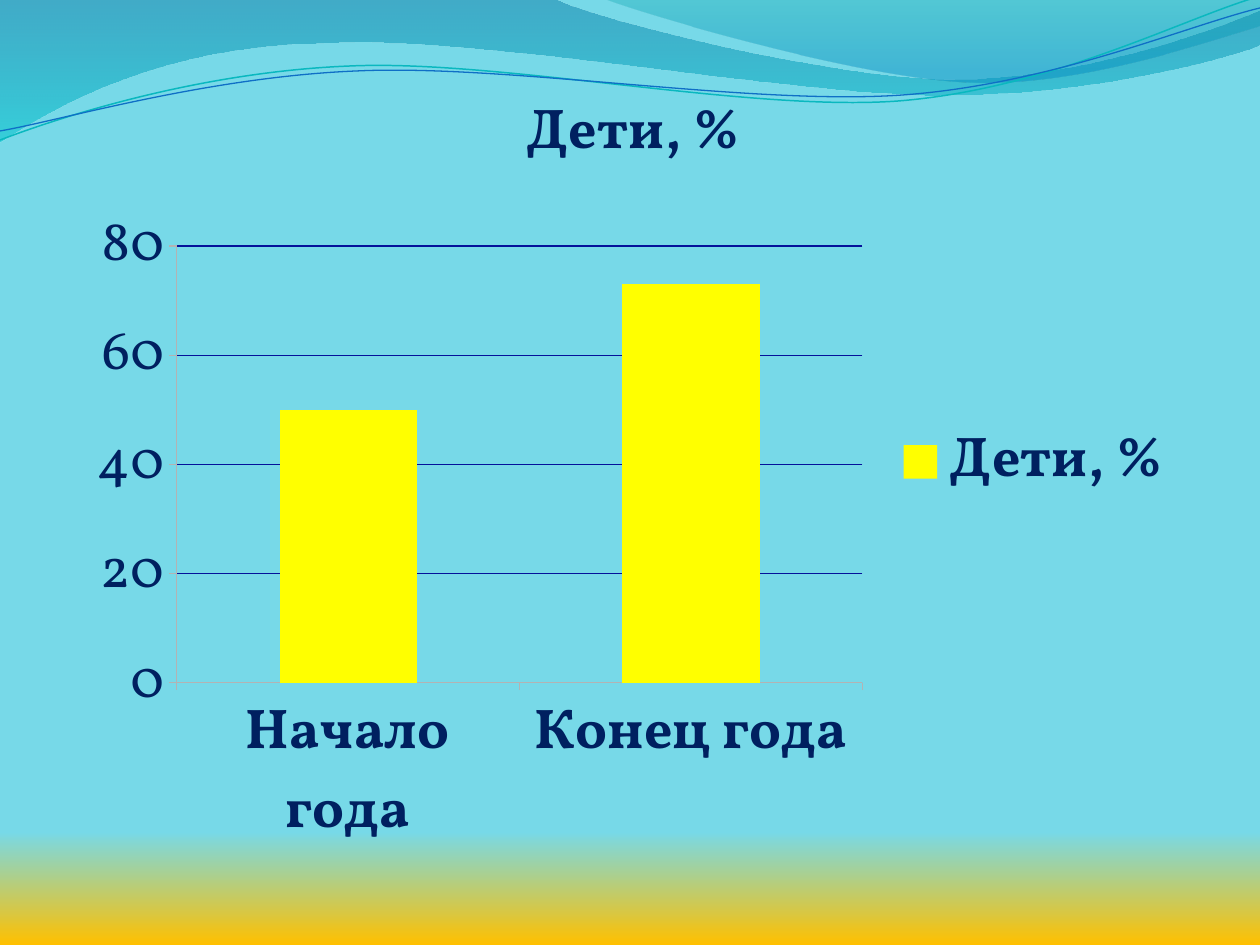
from lxml import etree
from pptx import Presentation
from pptx import util as u
from pptx.chart.data import CategoryChartData
from pptx.dml.color import RGBColor
from pptx.enum import chart as ch
from pptx.oxml.ns import qn

PX = 914400 / 126


def rgb(code):
    return RGBColor.from_string(code)


class Deck:
    font = "Vollkorn"
    ink = "002060"
    size = 32

    def __init__(self, wide, high):
        self.prs = Presentation()
        self.prs.slide_width = self.px(wide)
        self.prs.slide_height = self.px(high)
        self.slide = self.prs.slides.add_slide(self.prs.slide_layouts[6])

    def px(self, n):
        return u.Emu(round(n * PX))

    def grade(self, fill, stops):
        fill.gradient()
        fill.gradient_angle = 270
        for stop, (pos, code) in zip(fill.gradient_stops, stops):
            stop.position = pos
            stop.color.rgb = rgb(code)

    def back(self, stops):
        self.grade(self.slide.background.fill, stops)

    def shape(self, start, parts, close):
        pen = self.slide.shapes.build_freeform(*start, scale=PX)
        pts = [p[i:i + 2] for p in parts for i in range(0, len(p), 2)]
        pen.add_line_segments(pts, close=close)
        item = pen.convert_to_shape()
        item.shadow.inherit = False
        self.bend(item, parts)
        return item

    def bend(self, item, parts):
        lines = iter(list(item._element.iter(qn("a:lnTo"))))
        for part in parts:
            line = next(lines)
            if len(part) == 6:
                line.addprevious(etree.Element(qn("a:cubicBezTo")))
                arc = line.getprevious()
                for seg in (line, next(lines), next(lines)):
                    arc.append(seg[0])
                    seg.getparent().remove(seg)

    def wave(self, start, parts, stops, alphas):
        item = self.shape(start, parts, True)
        item.line.fill.background()
        self.grade(item.fill, stops)
        tints = item._element.spPr.iter(qn("a:srgbClr"))
        for tint, alpha in zip(tints, alphas):
            etree.SubElement(tint, qn("a:alpha")).set("val", str(alpha * 1000))

    def curve(self, start, parts, code, width):
        item = self.shape(start, parts, False)
        item.fill.background()
        item.line.color.rgb = rgb(code)
        item.line.width = u.Pt(width)

    def style(self, font, bold):
        font.name = self.font
        font.size = u.Pt(self.size)
        font.bold = bold
        font.color.rgb = rgb(self.ink)

    def axis(self, axis, bold):
        self.style(axis.tick_labels.font, bold)
        axis.major_tick_mark = ch.XL_TICK_MARK.OUTSIDE
        axis.format.line.color.rgb = rgb("B3B3B3")
        axis.format.line.width = u.Pt(0.75)

    def bars(self, box, name, cats, vals, code):
        data = CategoryChartData()
        data.categories = cats
        data.add_series(name, vals)
        chart = self.slide.shapes.add_chart(
            ch.XL_CHART_TYPE.COLUMN_STACKED, *map(self.px, box), data).chart
        self.style(chart.font, False)
        chart.has_title = True
        run = chart.chart_title.text_frame.paragraphs[0].add_run()
        run.text = name
        self.style(run.font, True)
        chart.has_legend = True
        chart.legend.position = ch.XL_LEGEND_POSITION.RIGHT
        chart.legend.include_in_layout = False
        self.style(chart.legend.font, True)
        self.axis(chart.category_axis, True)
        scale = chart.value_axis
        self.axis(scale, False)
        scale.minimum_scale, scale.maximum_scale = 0, 80
        scale.major_unit = 20
        grid = scale.major_gridlines.format.line
        grid.color.rgb = rgb("04129A")
        grid.width = u.Pt(0.75)
        plot = chart.plots[0]
        plot.vary_by_categories = False
        plot.gap_width, plot.overlap = 150, 100
        fill = plot.series[0].format.fill
        fill.solid()
        fill.fore_color.rgb = rgb(code)


def main():
    deck = Deck(1260, 945)
    deck.back([(0.88, "77D9E8"), (1, "FFC000")])
    deck.wave((0, 0), [
        (554, -1), (600, 21, 837, 79, 955, 79), (1075, 79, 1207, 33, 1260, 11),
        (1261, 45), (1239, 55, 1096, 96, 940, 95), (783, 95, 481, 35, 324, 43),
        (163, 45, 58, 105, -1, 142)],
        [(0, "0074A1"), (1, "00C6CF")], (45, 55))
    deck.wave((604, -1), [
        (641, 14, 859, 78, 969, 82), (1079, 87, 1211, 40, 1260, 26), (1260, 0)],
        [(0, "00A1A9"), (0.8, "008BBF")], (30, 45))
    deck.curve((0, 140), [
        (60, 117, 199, 72, 349, 66), (498, 59, 747, 112, 898, 101),
        (1050, 89, 1182, 19, 1257, -3)], "0AB8BF", 0.85)
    deck.curve((0, 131), [
        (59, 121, 207, 77, 357, 71), (508, 64, 752, 106, 903, 95),
        (1053, 84, 1186, 26, 1260, 8)], "0F6FC6", 0.75)
    deck.bars((74, 55, 1131, 814), "Дети, % ",
              ["Начало года", "Конец года"], [50, 73], "FFFF00")
    deck.prs.save("out.pptx")


if __name__ == "__main__":
    main()
